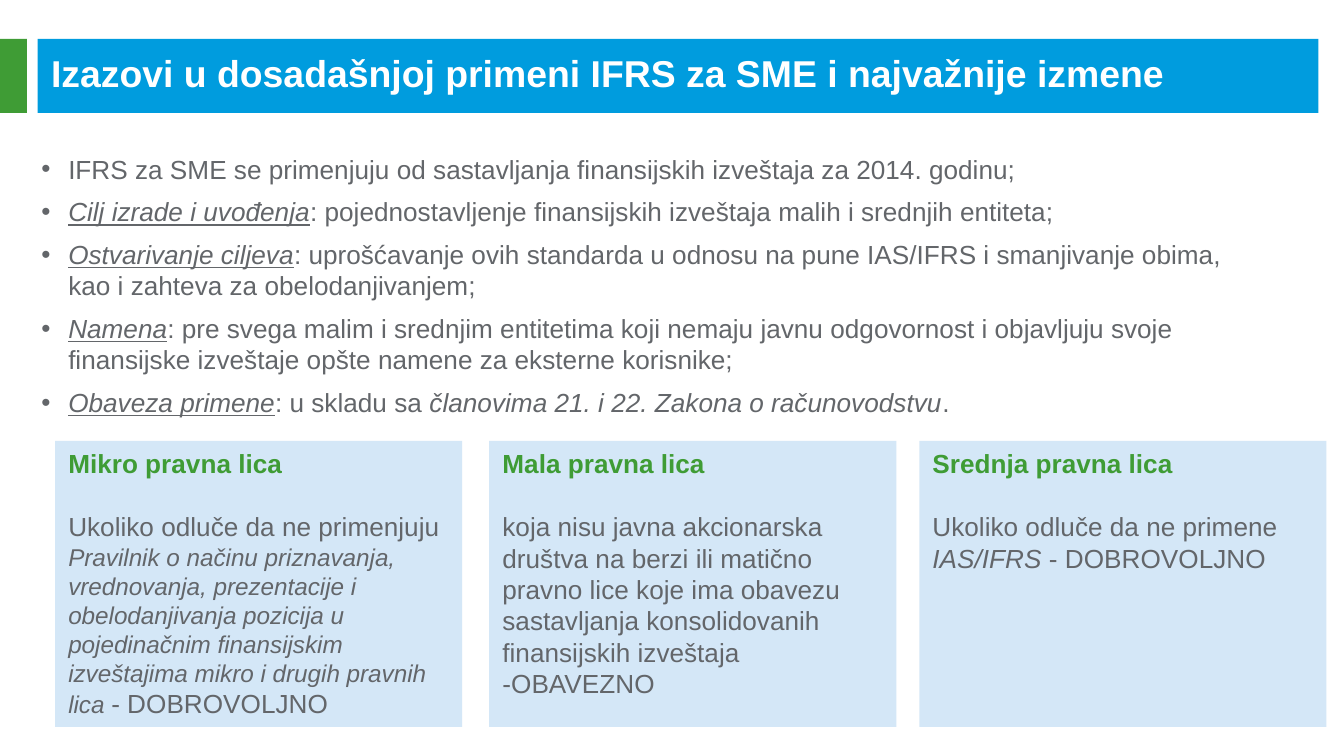
from pptx import Presentation
from pptx.dml.color import RGBColor
from pptx.enum.shapes import MSO_SHAPE
from pptx.enum.text import MSO_ANCHOR, MSO_AUTO_SIZE, PP_ALIGN
from pptx.oxml.ns import qn
from pptx.util import Inches, Pt
from lxml import etree

RECT = MSO_SHAPE.RECTANGLE
TOP, MIDDLE = MSO_ANCHOR.TOP, MSO_ANCHOR.MIDDLE
LEFT = PP_ALIGN.LEFT
NO_FIT = MSO_AUTO_SIZE.NONE

FONT = "Arial"
COLORS = {"blue": "009CDE", "green": "3F9C35", "pale": "D4E7F7",
          "grey": "63666A", "white": "FFFFFF"}

# Slide in 16:9
SLIDE_WIDTH = Inches(10)
SLIDE_HEIGHT = SLIDE_WIDTH * 9 // 16

# Header band and card row, in inches
BAND_TOP, BAND_HEIGHT = 0.29, 0.55
CARD_TOP, CARD_WIDTH, CARD_HEIGHT = 3.28, 3.03, 2.13
CARD_LEFTS = (0.41, 3.64, 6.84)

TITLE = "Izazovi u dosadašnjoj primeni IFRS za SME i najvažnije izmene"

# Each run is (text, style); style may hold italic, underline and size
TERM = {"italic": True, "underline": True}
ITALIC = {"italic": True}
POINTS = [
    [("IFRS za SME se primenjuju od sastavljanja finansijskih izveštaja za 2014. godinu;", {})],
    [("Cilj izrade i uvođenja", TERM),
     (": pojednostavljenje finansijskih izveštaja malih i srednjih entiteta;", {})],
    [("Ostvarivanje ciljeva", TERM),
     (": uprošćavanje ovih standarda u odnosu na pune IAS/IFRS i smanjivanje obima, "
      "kao i zahteva za obelodanjivanjem;", {})],
    [("Namena", TERM),
     (": pre svega malim i srednjim entitetima koji nemaju javnu odgovornost i objavljuju "
      "svoje finansijske izveštaje opšte namene za eksterne korisnike;", {})],
    [("Obaveza primene", TERM), (": u skladu sa ", {}),
     ("članovima 21. i 22. Zakona o računovodstvu", ITALIC), (".", {})],
]
CARDS = [
    ("Mikro pravna lica",
     [("Ukoliko odluče da ne primenjuju ", {}),
      ("Pravilnik o načinu priznavanja, vrednovanja, prezentacije i obelodanjivanja pozicija "
       "u pojedinačnim finansijskim izveštajima mikro i drugih pravnih lica ",
       {"italic": True, "size": 13}),
      ("- DOBROVOLJNO", {})]),
    ("Mala pravna lica",
     [("koja nisu javna akcionarska društva na berzi ili matično pravno lice koje ima obavezu "
       "sastavljanja konsolidovanih finansijskih izveštaja -OBAVEZNO", {})]),
    ("Srednja pravna lica",
     [("Ukoliko odluče da ne primene ", {}), ("IAS/IFRS", ITALIC),
      (" - DOBROVOLJNO", {})]),
]


def style_run(run, color, size=14, bold=False, italic=False, underline=False):
    font = run.font
    font.name, font.size = FONT, Pt(size)
    font.bold, font.italic, font.underline = bold, italic, underline
    font.color.rgb = RGBColor.from_string(COLORS[color])


def add_runs(paragraph, runs):
    for text, style in runs:
        run = paragraph.add_run()
        run.text = text
        style_run(run, "grey", **style)


def add_block(slide, left, top, width, height, color):
    block = slide.shapes.add_shape(RECT, Inches(left), Inches(top),
                                   Inches(width), Inches(height))
    block.shadow.inherit = False
    block.fill.solid()
    block.fill.fore_color.rgb = RGBColor.from_string(COLORS[color])
    block.line.fill.background()
    return block


def set_title(slide):
    title = slide.shapes.title
    title.left, title.top = Inches(0.28), Inches(0.39)
    title.width, title.height = Inches(9.45), Inches(0.3)
    frame = title.text_frame
    frame.text = TITLE
    frame.auto_size, frame.vertical_anchor = NO_FIT, MIDDLE
    frame.margin_top = frame.margin_bottom = 0
    heading = frame.paragraphs[0]
    heading.alignment = LEFT
    style_run(heading.runs[0], "white", size=20, bold=True)
    # Bring the title in front of the band
    slide.shapes._spTree.append(title._element)


def add_bullet(paragraph):
    properties = paragraph._p.get_or_add_pPr()
    properties.set("marL", str(Inches(0.2)))
    properties.set("indent", str(-Inches(0.2)))
    color = etree.SubElement(properties, qn("a:buClr"))
    etree.SubElement(color, qn("a:srgbClr"), val=COLORS["grey"])
    etree.SubElement(properties, qn("a:buFont"), typeface=FONT)
    etree.SubElement(properties, qn("a:buChar"), char="•")


def add_points(slide):
    box = slide.shapes.add_textbox(Inches(0.21), Inches(1.09), Inches(9.33), Inches(2.09))
    frame = box.text_frame
    frame.word_wrap = True
    for index, runs in enumerate(POINTS):
        point = frame.add_paragraph() if index else frame.paragraphs[0]
        add_bullet(point)
        point.space_after = Pt(6)
        add_runs(point, runs)


def add_card(slide, left, heading_text, runs):
    card = add_block(slide, left, CARD_TOP, CARD_WIDTH, CARD_HEIGHT, "pale")
    frame = card.text_frame
    frame.word_wrap, frame.vertical_anchor = True, TOP
    frame.text = heading_text
    heading, body = frame.paragraphs[0], frame.add_paragraph()
    heading.alignment = body.alignment = LEFT
    heading.space_after = Pt(17)
    style_run(heading.runs[0], "green", bold=True)
    add_runs(body, runs)


def main():
    deck = Presentation()
    deck.slide_width, deck.slide_height = SLIDE_WIDTH, SLIDE_HEIGHT
    slide = deck.slides.add_slide(deck.slide_layouts[5])

    # Header
    add_block(slide, 0.28, BAND_TOP, 9.53, BAND_HEIGHT, "blue")
    add_block(slide, 0, BAND_TOP, 0.2, BAND_HEIGHT, "green")
    set_title(slide)

    # Key points and the three entity cards
    add_points(slide)
    for left, (heading, runs) in zip(CARD_LEFTS, CARDS):
        add_card(slide, left, heading, runs)

    deck.save("out.pptx")


if __name__ == "__main__":
    main()
